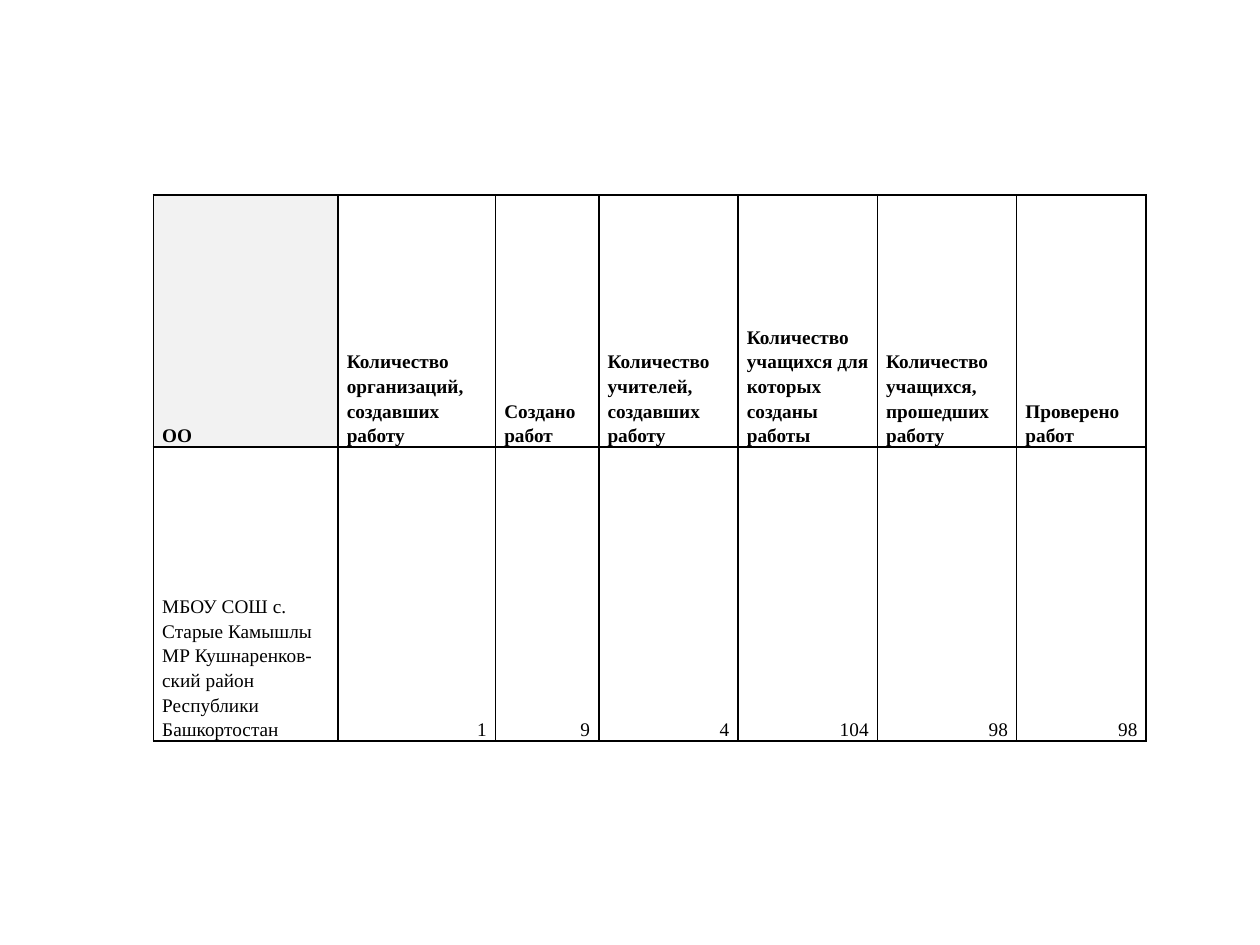
from pptx import Presentation
from pptx.dml.color import RGBColor
from pptx.enum import text
from pptx.oxml import parse_xml
from pptx.oxml.ns import nsdecls
from pptx.util import Pt

FONT = "Times New Roman"
BLACK = "000000"
HEADER_GREY = "F2F2F2"


def color(value):
    return RGBColor.from_string(value)


def add_borders(cell):
    tc_pr = cell._tc.get_or_add_tcPr()
    for i, side in enumerate(("lnL", "lnR", "lnT", "lnB")):
        tc_pr.insert(i, parse_xml(
            f'<a:{side} {nsdecls("a")} w="{Pt(1)}"><a:solidFill>'
            f'<a:srgbClr val="{BLACK}"/></a:solidFill></a:{side}>'))


prs = Presentation()
prs.slide_width, prs.slide_height = Pt(720), Pt(540)
s = prs.slides.add_slide(prs.slide_layouts[6])

rows = [
    ["ОО", "Количество организаций, создавших работу", "Создано работ",
     "Количество учителей, создавших работу",
     "Количество учащихся для которых созданы работы",
     "Количество учащихся, прошедших работу", "Проверено работ"],
    ["МБОУ СОШ с. Старые Камышлы МР Кушнаренков-ский район Республики Башкортостан",
     "1", "9", "4", "104", "98", "98"],
]
widths = [105.5, 90, 59, 79.6, 79.6, 79.6, 74]
heights = [144, 168]

# Table grid
table = s.shapes.add_table(len(rows), len(widths), Pt(87.7), Pt(111.4),
                           Pt(sum(widths)), Pt(sum(heights))).table
table.horz_banding = False
for column, width in zip(table.columns, widths):
    column.width = Pt(width)
for row, height in zip(table.rows, heights):
    row.height = Pt(height)

# Cells: bold header row, right-aligned counts
for i, values in enumerate(rows):
    for j, value in enumerate(values):
        cell = table.cell(i, j)
        cell.text = value
        cell.vertical_anchor = text.MSO_ANCHOR.BOTTOM
        cell.margin_left = cell.margin_right = Pt(5)
        cell.margin_top = cell.margin_bottom = Pt(0)
        if i == j == 0:
            cell.fill.solid()
            cell.fill.fore_color.rgb = color(HEADER_GREY)
        else:
            cell.fill.background()
        add_borders(cell)

        p = cell.text_frame.paragraphs[0]
        p.line_spacing = 1.15
        p.alignment = text.PP_ALIGN.RIGHT if i and j else text.PP_ALIGN.LEFT
        p.font.name = FONT
        p.font.size = Pt(11)
        p.font.bold = i == 0
        p.font.color.rgb = color(BLACK)

prs.save("out.pptx")
